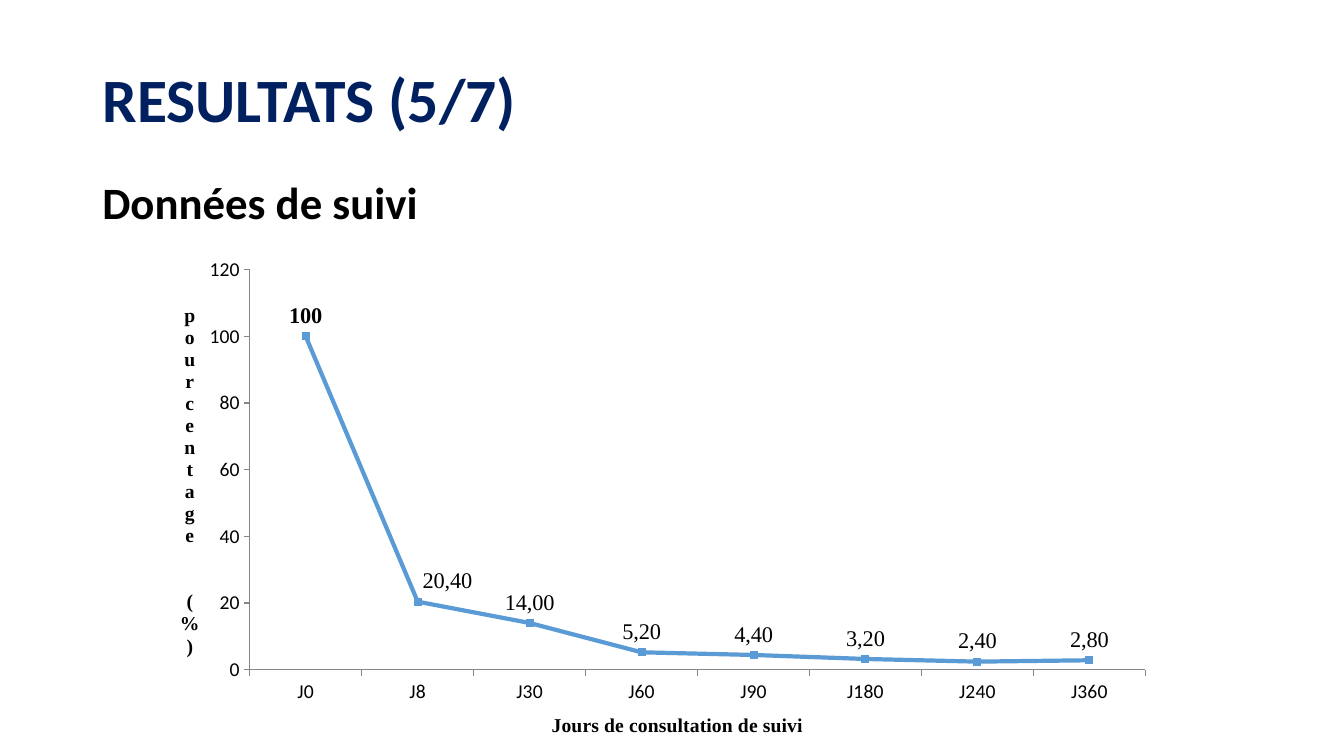
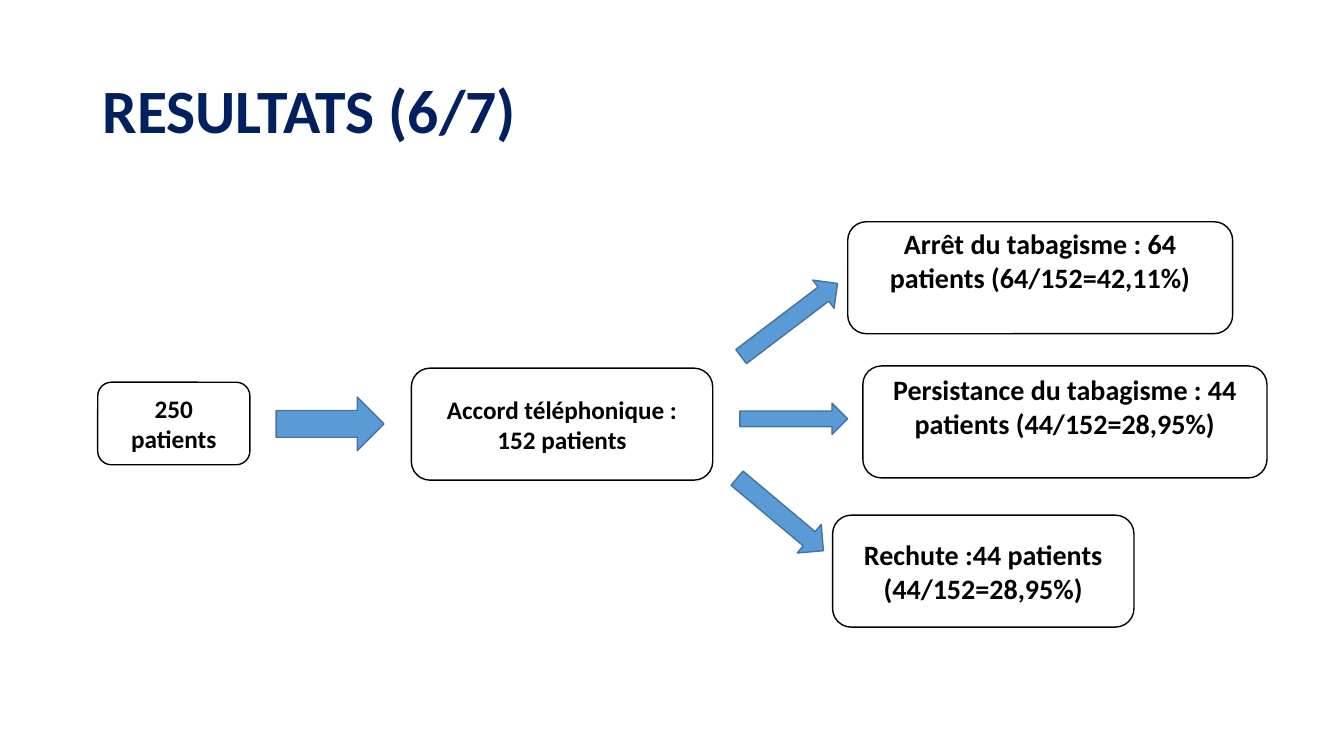
from lxml.etree import SubElement
from pptx import Presentation
from pptx.chart.data import CategoryChartData
from pptx.dml.color import RGBColor
from pptx.enum.chart import (XL_CHART_TYPE, XL_LABEL_POSITION, XL_MARKER_STYLE,
                             XL_TICK_MARK)
from pptx.enum.shapes import MSO_SHAPE
from pptx.enum.text import MSO_ANCHOR, MSO_AUTO_SIZE, PP_ALIGN
from pptx.oxml.ns import qn
from pptx.util import Pt

NAVY = RGBColor(0x00, 0x20, 0x60)
BLACK = RGBColor(0x00, 0x00, 0x00)
WHITE = RGBColor(0xFF, 0xFF, 0xFF)
BLUE = RGBColor(0x5B, 0x9B, 0xD5)
DARK_BLUE = RGBColor(0x43, 0x73, 0x9E)
GRAY = RGBColor(0x86, 0x86, 0x86)
SANS, SERIF = "Calibri", "Times New Roman"

LEFT, WIDTH = 66, 828
FOLLOW_UP = [("J0", 100), ("J8", 20.4), ("J30", 14), ("J60", 5.2),
             ("J90", 4.4), ("J180", 3.2), ("J240", 2.4), ("J360", 2.8)]
X_TITLE, Y_TITLE = "Jours de consultation de suivi", "pourcentage  (%)"

# text, (left, top, width, height), font size, bottom inset
BOXES = [
    ("250 patients", (69.8, 273, 108.7, 59), 18, 3.6),
    ("Accord téléphonique : 152 patients", (293.8, 263, 215.3, 80), 18, 3.6),
    ("Arrêt du tabagisme : 64 patients (64/152=42,11%)",
     (605.5, 158.4, 275, 80), 20, 28),
    ("Persistance du tabagisme : 44 patients (44/152=28,95%)",
     (616.3, 261.4, 288.7, 80), 20, 25.6),
    ("Rechute :44 patients (44/152=28,95%)",
     (594.7, 368, 215.3, 80), 20, 3.6),
]
# (left, top, width, height), rotation
ARROWS = [
    ((197.3, 283.7, 77, 38.2), 0),
    ((520.6, 216, 86.4, 25.2), 322.8),
    ((528.5, 288, 77, 22.3), 0),
    ((517, 354.2, 80.6, 26.6), 40),
]


def set_font(font, size, name=SANS, color=BLACK, bold=True):
    for key, value in dict(size=Pt(size), name=name, bold=bold).items():
        setattr(font, key, value)
    font.color.rgb = color


def write(tf, text, size, color=BLACK, align=PP_ALIGN.LEFT, spacing=None):
    tf.word_wrap = True
    tf.auto_size = MSO_AUTO_SIZE.NONE
    p = tf.paragraphs[0]
    p.alignment, p.line_spacing = align, spacing
    r = p.add_run()
    r.text = text
    set_font(r.font, size, color=color)


def add_slide(prs, title, top):
    s = prs.slides.add_slide(prs.slide_layouts[5])
    sp = s.shapes.title
    place = dict(left=LEFT, top=top, width=WIDTH, height=104.4)
    for key, value in place.items():
        setattr(sp, key, Pt(value))
    sp.text_frame.vertical_anchor = MSO_ANCHOR.MIDDLE
    write(sp.text_frame, title, 44, NAVY, spacing=0.9)
    return s


def add_shape(s, kind, box, fill, line):
    sp = s.shapes.add_shape(kind, *map(Pt, box))
    sp.shadow.inherit = False
    sp.fill.solid()
    sp.fill.fore_color.rgb = fill
    sp.line.color.rgb = line
    sp.line.width = Pt(1)
    return sp


def set_layout(parent, index, **values):
    """Give a chart part a manual layout, as fractions of the chart."""
    old = parent.find(qn("c:layout"))
    if old is not None:
        parent.remove(old)
    layout = SubElement(parent, qn("c:layout"))
    parent.insert(index, layout)
    manual = SubElement(layout, qn("c:manualLayout"))
    for key, value in values.items():
        SubElement(manual, qn("c:" + key)).set("val", str(value))


def format_axis(axis, title):
    axis.has_major_gridlines = False
    axis.major_tick_mark = XL_TICK_MARK.OUTSIDE
    axis.minor_tick_mark = XL_TICK_MARK.NONE
    axis.format.line.color.rgb = GRAY
    axis.format.line.width = Pt(0.75)
    set_font(axis.tick_labels.font, 14, bold=False)
    tf = axis.axis_title.text_frame
    r = tf.paragraphs[0].add_run()
    r.text = title
    set_font(r.font, 14, SERIF)
    return tf


def format_series(series):
    series.smooth = False
    series.format.line.color.rgb = BLUE
    series.format.line.width = Pt(3)
    marker = series.marker
    marker.style, marker.size = XL_MARKER_STYLE.SQUARE, 5
    marker.format.fill.solid()
    marker.format.fill.fore_color.rgb = BLUE
    marker.format.line.color.rgb = BLUE
    labels = series.data_labels
    labels.show_value = True
    labels.position = XL_LABEL_POSITION.ABOVE
    set_font(labels.font, 16, SERIF)
    for i, (_, value) in list(enumerate(FOLLOW_UP))[1:]:
        label = series.points[i].data_label
        r = label.text_frame.paragraphs[0].add_run()
        r.text = f"{value:.2f}".replace(".", ",")
        set_font(r.font, 16, SERIF, bold=False)
        label.position = XL_LABEL_POSITION.ABOVE
    # The label of J8 moves right, clear of the steep line
    set_layout(labels._element.find(qn("c:dLbl")), 1, x=0.03, y=0)


def add_follow_up_chart(s):
    data = CategoryChartData()
    data.categories = [day for day, _ in FOLLOW_UP]
    data.add_series("Series 1", [value for _, value in FOLLOW_UP])
    box = map(Pt, (126, 182.2, 708.5, 348.5))
    chart = s.shapes.add_chart(XL_CHART_TYPE.LINE_MARKERS_STACKED, *box, data).chart
    chart.has_title = chart.has_legend = False
    set_font(chart.font, 10, bold=False)
    plot = chart.plots[0]
    plot.vary_by_categories = False
    set_layout(plot._element.getparent(), 0, layoutTarget="inner",
               xMode="edge", yMode="edge", x=0.074, y=0.03, w=0.903, h=0.82)
    format_axis(chart.category_axis, X_TITLE)
    axis = chart.value_axis
    axis.minimum_scale, axis.maximum_scale, axis.major_unit = 0, 120, 20
    body = format_axis(axis, Y_TITLE)._txBody.find(qn("a:bodyPr"))
    body.set("rot", "0")
    body.set("vert", "wordArtVert")
    format_series(plot.series[0])


def main():
    prs = Presentation()
    prs.slide_width, prs.slide_height = Pt(960), Pt(540)

    s = add_slide(prs, "RESULTATS (5/7)", 20.9)
    heading = s.shapes.add_textbox(*map(Pt, (LEFT, 125.3, WIDTH, 48)))
    write(heading.text_frame, "Données de suivi", 32, spacing=0.9)
    add_follow_up_chart(s)

    s = add_slide(prs, "RESULTATS (6/7)", 28.8)
    for text, box, size, inset in BOXES:
        sp = add_shape(s, MSO_SHAPE.ROUNDED_RECTANGLE, box, WHITE, BLACK)
        sp.text_frame.vertical_anchor = MSO_ANCHOR.MIDDLE
        sp.text_frame.margin_bottom = Pt(inset)
        write(sp.text_frame, text, size, align=PP_ALIGN.CENTER)
    for box, rotation in ARROWS:
        add_shape(s, MSO_SHAPE.RIGHT_ARROW, box, BLUE, DARK_BLUE).rotation = rotation

    prs.save("out.pptx")


if __name__ == "__main__":
    main()
